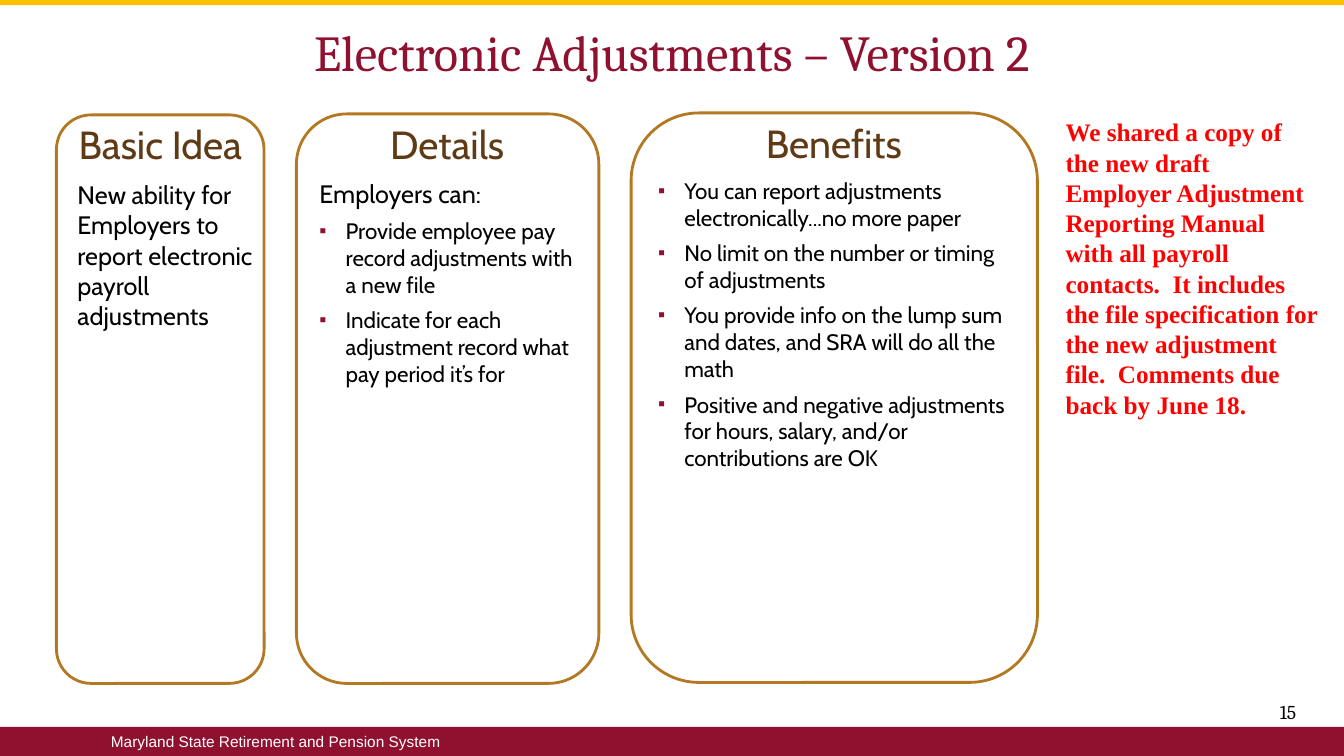
"""Build the slide on electronic adjustments, version 2."""
from dataclasses import dataclass

import lxml.etree
import pptx
import pptx.dml.color
import pptx.enum.shapes
import pptx.enum.text
import pptx.oxml.ns
import pptx.util

Inches = pptx.util.Inches
Pt = pptx.util.Pt
ALIGN = pptx.enum.text.PP_ALIGN
ANCHOR = pptx.enum.text.MSO_ANCHOR
AUTO = pptx.enum.text.MSO_AUTO_SIZE
SHAPE = pptx.enum.shapes.MSO_SHAPE

MAROON, GOLD, BRONZE, BROWN = "8F112F", "FFC000", "B27822", "603A14"
BLACK, WHITE, RED = "000000", "FFFFFF", "FF0000"
Box = tuple[float, float, float, float]


@dataclass
class Line:
    text: str
    size: float = 16
    bullet: bool = True


@dataclass
class Panel:
    heading: str
    frame: Box
    heading_box: Box
    body_box: Box
    lines: list[Line]


PANELS = [
    Panel("Basic Idea", (0.56, 1.14, 2.06, 5.64), (0.61, 1.14, 1.96, 0.57),
          (0.67, 1.73, 1.95, 1.92),
          [Line("New ability for Employers to report electronic payroll adjustments", 18, False)]),
    Panel("Details", (2.94, 1.13, 3, 5.65), (3.73, 1.14, 1.41, 0.57),
          (3.07, 1.72, 2.72, 2.81),
          [Line("Employers can:", 18, False),
           Line("Provide employee pay record adjustments with a new file"),
           Line("Indicate for each adjustment record what pay period it’s for")]),
    Panel("Benefits", (6.26, 1.12, 4.03, 5.65), (7.45, 1.13, 1.64, 0.57),
          (6.43, 1.71, 3.67, 3.05),
          [Line("You can report adjustments electronically...no more paper"),
           Line("No limit on the number or timing of adjustments"),
           Line("You provide info on the lump sum and dates, and SRA will do all the math"),
           Line("Positive and negative adjustments for hours, salary, and/or "
                "contributions are OK")]),
]


def rgb(value: str) -> pptx.dml.color.RGBColor:
    return pptx.dml.color.RGBColor.from_string(value)


def inches(box: Box) -> list[int]:
    return [Inches(v) for v in box]


def write(p, text: str, *, size: float, font: str, color: str, bold: bool = False,
          align=ALIGN.LEFT, before: float = 0) -> None:
    p.alignment = align
    p.space_before = Pt(before)
    r = p.add_run()
    r.text = text
    r.font.size = Pt(size)
    r.font.name = font
    r.font.bold = bold
    r.font.color.rgb = rgb(color)


def add_bullet(p) -> None:
    pPr = p._p.get_or_add_pPr()
    pPr.set("marL", str(Inches(0.26)))
    pPr.set("indent", str(Inches(-0.26)))
    qn = pptx.oxml.ns.qn
    clr = lxml.etree.SubElement(pPr, qn("a:buClr"))
    lxml.etree.SubElement(clr, qn("a:srgbClr"), val=MAROON)
    lxml.etree.SubElement(pPr, qn("a:buSzPct"), val="90000")
    lxml.etree.SubElement(pPr, qn("a:buFont"), typeface="Arial")
    lxml.etree.SubElement(pPr, qn("a:buChar"), char="▪")


def add_box(shapes, box: Box, wrap: bool = True, grow: bool = True):
    tf = shapes.add_textbox(*inches(box)).text_frame
    tf.word_wrap = wrap
    tf.auto_size = AUTO.SHAPE_TO_FIT_TEXT if grow else AUTO.NONE
    return tf


def add_bar(shapes, box: Box, color: str):
    sp = shapes.add_shape(SHAPE.RECTANGLE, *inches(box))
    sp.shadow.inherit = False
    sp.fill.solid()
    sp.fill.fore_color.rgb = rgb(color)
    sp.line.fill.background()
    return sp


def add_panel(slide, panel: Panel) -> None:
    shapes = slide.shapes.add_group_shape().shapes
    sp = shapes.add_shape(SHAPE.ROUNDED_RECTANGLE, *inches(panel.frame))
    sp.shadow.inherit = False
    sp.fill.background()
    sp.line.color.rgb = rgb(BRONZE)
    sp.line.width = Pt(2)
    tf = add_box(shapes, panel.heading_box, wrap=False)
    write(tf.paragraphs[0], panel.heading, size=28, font="Cabin", color=BROWN,
          align=ALIGN.CENTER)
    tf = add_box(shapes, panel.body_box)
    for i, line in enumerate(panel.lines):
        p = tf.add_paragraph() if i else tf.paragraphs[0]
        if line.bullet:
            add_bullet(p)
        write(p, line.text, size=line.size, font="Cabin", color=BLACK,
              before=6 if i else 0)


def main() -> None:
    prs = pptx.Presentation()
    prs.slide_width, prs.slide_height = Inches(13.33), Inches(7.5)
    slide = prs.slides.add_slide(prs.slide_layouts[5])

    tf = add_bar(slide.shapes, (0, 7.21, 13.33, 0.29), MAROON).text_frame
    tf.margin_left = Inches(1.1)
    tf.vertical_anchor = ANCHOR.MIDDLE
    write(tf.paragraphs[0], "Maryland State Retirement and Pension System",
          size=11, font="Arial", color=WHITE)
    add_bar(slide.shapes, (0, 0, 13.33, 0.05), GOLD)

    title = slide.shapes.title
    title.left, title.top, title.width, title.height = inches((0, 0.05, 13.33, 0.92))
    tf = title.text_frame
    tf.auto_size = AUTO.NONE
    tf.vertical_anchor = ANCHOR.MIDDLE
    write(tf.paragraphs[0], "Electronic Adjustments – Version 2", size=36,
          font="Cambria", color=MAROON, align=ALIGN.CENTER)

    for panel in PANELS:
        add_panel(slide, panel)

    tf = add_box(slide.shapes, (12.22, 6.93, 1.11, 0.27), grow=False)
    tf.vertical_anchor = ANCHOR.MIDDLE
    write(tf.paragraphs[0], "15", size=14, font="Cambria", color=BLACK, align=ALIGN.CENTER)

    tf = add_box(slide.shapes, (10.47, 1.11, 2.7, 3.13))
    write(tf.paragraphs[0],
          "We shared a copy of the new draft Employer Adjustment Reporting Manual "
          "with all payroll contacts.  It includes the file specification for the "
          "new adjustment file.  Comments due back by June 18.",
          size=18, font="Times New Roman", color=RED, bold=True)

    prs.save("out.pptx")


if __name__ == "__main__":
    main()
